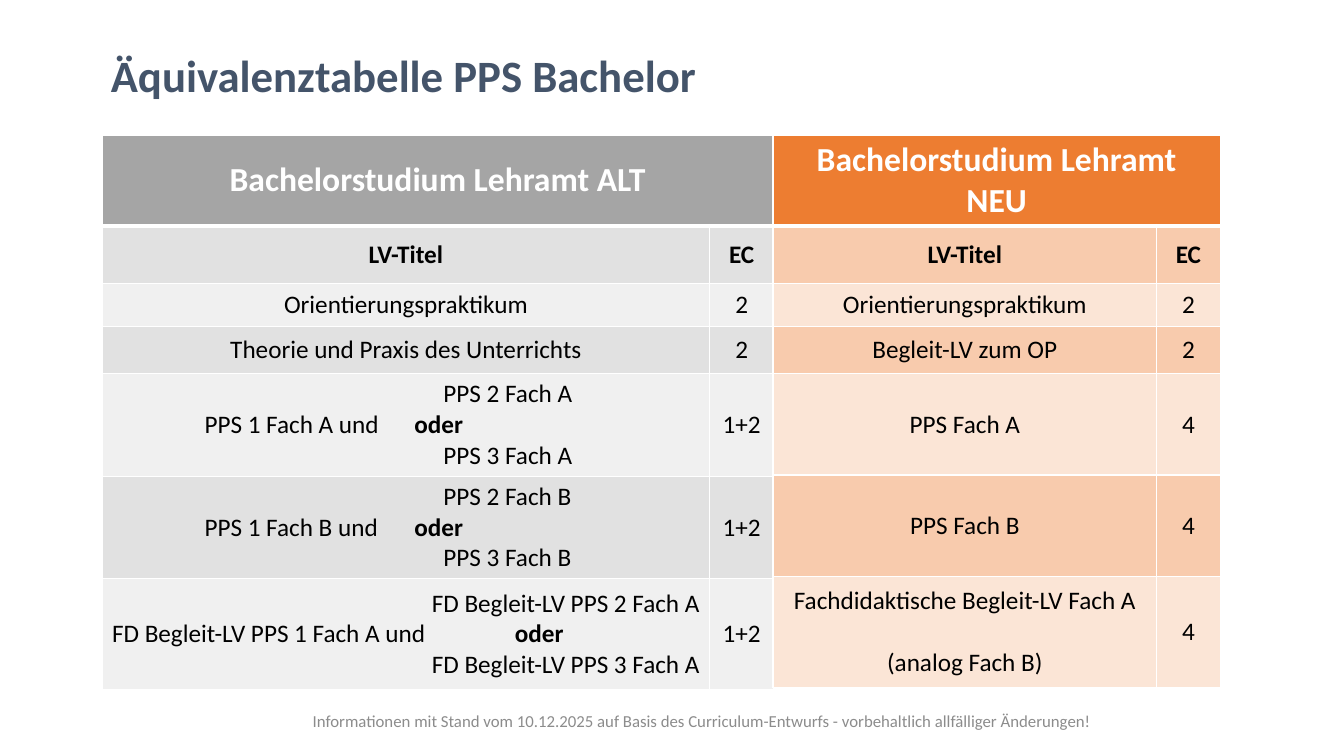
"""Build the equivalence table slide for the Bachelor PPS courses."""
from dataclasses import dataclass

from lxml import etree
from pptx import Presentation
from pptx import util as u
from pptx.dml import color
from pptx.enum import text
from pptx.oxml import ns

COLORS = {
    "title": "44546A", "note": "8C8C8C", "ink": "000000", "white": "FFFFFF",
    "old_head": "A5A5A5", "old_dark": "E1E1E1", "old_light": "F0F0F0",
    "new_head": "ED7D31", "new_dark": "F8CBAD", "new_light": "FBE5D6",
}
CENTER, LEFT, RIGHT = (text.PP_ALIGN.CENTER, text.PP_ALIGN.LEFT, text.PP_ALIGN.RIGHT)
TOP_ROWS = [2.29, 1.45, 1.09, 1.19]


@dataclass
class Line:
    """One paragraph; the part after a tab is bold."""
    words: str
    align: object = None
    indent: float = 0
    tab: float = 0
    before: float = 0


def rgb(name):
    """Return the named colour."""
    return color.RGBColor.from_string(COLORS[name])


def write(frame, lines, size=18, ink="ink", bold=False, align=CENTER,
          anchor=text.MSO_ANCHOR.MIDDLE):
    """Fill a text frame with lines in one format."""
    frame.word_wrap = True
    frame.vertical_anchor = anchor
    for number, line in enumerate(lines):
        para = frame.add_paragraph() if number else frame.paragraphs[0]
        para.alignment = line.align or align
        para.space_before = u.Pt(line.before)
        props = para._p.get_or_add_pPr()
        if line.indent:
            props.set("indent", str(u.Cm(line.indent)))
        if line.tab:
            stops = etree.SubElement(props, ns.qn("a:tabLst"))
            etree.SubElement(stops, ns.qn("a:tab"), pos=str(u.Cm(line.tab)), algn="l")
        lead, tab, tail = line.words.partition("\t")
        for words, heavy in ((lead, bold), (tab + tail, True)):
            if words:
                run = para.add_run()
                run.text = words
                run.font.name, run.font.size, run.font.bold = "Calibri", u.Pt(size), heavy
                run.font.color.rgb = rgb(ink)


def draw_borders(cell, bottom):
    """Give a cell white borders, with its own bottom width in points."""
    props = cell._tc.get_or_add_tcPr()
    for place, (side, width) in enumerate(zip("LRTB", (1, 1, 1, bottom))):
        edge = etree.Element(ns.qn(f"a:ln{side}"), w=str(u.Pt(width)))
        fill = etree.SubElement(edge, ns.qn("a:solidFill"))
        etree.SubElement(fill, ns.qn("a:srgbClr"), val=COLORS["white"])
        props.insert(place, edge)


def add_courses(slide, left, top, widths, heights, palette, heading, courses):
    """Place one curriculum table with its heading and course rows."""
    grid = slide.shapes.add_table(
        len(heights), 2, u.Cm(left), u.Cm(top),
        u.Cm(sum(widths)), u.Cm(sum(heights))).table
    for column, width in zip(grid.columns, widths):
        column.width = u.Cm(width)
    rows = [([Line(heading)], ""), ([Line("LV-Titel")], "EC"), *courses]
    for number, (course, credits) in enumerate(rows):
        grid.rows[number].height = u.Cm(heights[number])
        shade = "head" if number == 0 else "dark" if number % 2 else "light"
        for column, lines in enumerate((course, [Line(credits)])):
            cell = grid.cell(number, column)
            cell.fill.solid()
            cell.fill.fore_color.rgb = rgb(f"{palette}_{shade}")
            draw_borders(cell, bottom=1 if number else 3)
            cell.vertical_anchor = text.MSO_ANCHOR.MIDDLE
            write(cell.text_frame, lines, size=18 if number else 24,
                  ink="ink" if number else "white", bold=number < 2)
    grid.cell(0, 0).merge(grid.cell(0, 1))


def add_title(slide, left, top, width, height):
    """Place the slide title in its placeholder."""
    title = slide.shapes.title
    title.left, title.top, title.width, title.height = map(u.Cm, (left, top, width, height))
    write(title.text_frame, [Line("Äquivalenztabelle PPS Bachelor")], size=32,
          ink="title", bold=True, align=LEFT, anchor=text.MSO_ANCHOR.TOP)


def add_note(slide, left, top, width, height):
    """Place the note on the state of the information."""
    note = slide.shapes.add_textbox(*map(u.Cm, (left, top, width, height)))
    write(note.text_frame, [Line(
        "Informationen mit Stand vom 10.12.2025 auf Basis des Curriculum-Entwurfs"
        " - vorbehaltlich allfälliger Änderungen!")], size=12, ink="note")


def subject_choice(subject):
    """Return the lines for the choice of PPS courses in a subject."""
    return [Line(f"PPS 2 Fach {subject}", LEFT, indent=8.35),
            Line(f"PPS 1 Fach {subject} und\toder", LEFT, indent=2.33, tab=9.95),
            Line(f"PPS 3 Fach {subject}", LEFT, indent=8.35)]


def main():
    """Build and save the slide."""
    deck = Presentation()
    deck.slide_width, deck.slide_height = u.Cm(33.87), u.Cm(19.05)
    slide = deck.slides.add_slide(deck.slide_layouts[5])
    didactics = [Line("FD Begleit-LV PPS 2 Fach A", RIGHT),
                 Line("FD Begleit-LV PPS 1 Fach A und\toder", LEFT, tab=10.15),
                 Line("FD Begleit-LV PPS 3 Fach A", RIGHT)]
    add_courses(slide, 2.57, 3.4, [15.32, 1.6], TOP_ROWS + [2.57, 2.57, 2.8],
                "old", "Bachelorstudium Lehramt ALT", [
                    ([Line("Orientierungspraktikum")], "2"),
                    ([Line("Theorie und Praxis des Unterrichts")], "2"),
                    (subject_choice("A"), "1+2"),
                    (subject_choice("B"), "1+2"),
                    (didactics, "1+2")])
    add_title(slide, 2.54, 1.07, 17.86, 1.63)
    add_note(slide, 6.43, 17.65, 22.53, 1.02)
    add_courses(slide, 19.48, 3.4, [9.67, 1.6], TOP_ROWS + [2.55, 2.55, 2.8],
                "new", "Bachelorstudium Lehramt NEU", [
                    ([Line("Orientierungspraktikum")], "2"),
                    ([Line("Begleit-LV zum OP")], "2"),
                    ([Line("PPS Fach A")], "4"),
                    ([Line("PPS Fach B")], "4"),
                    ([Line("Fachdidaktische Begleit-LV Fach A"),
                      Line("(analog Fach B)", before=22)], "4")])
    deck.save("out.pptx")


if __name__ == "__main__":
    main()
